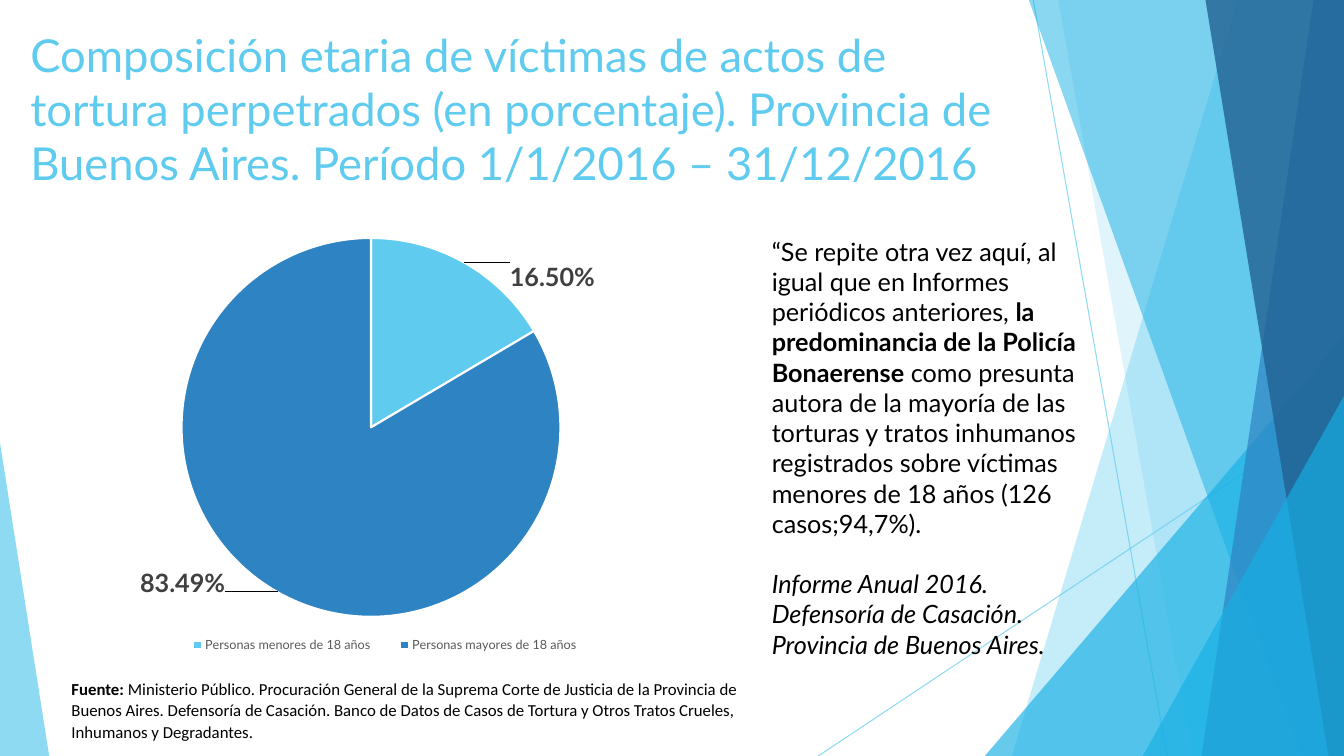
from dataclasses import dataclass

from lxml import etree
from pptx import Presentation
from pptx.chart.data import CategoryChartData
from pptx.dml.color import RGBColor
from pptx.enum.chart import XL_CHART_TYPE, XL_LABEL_POSITION, XL_LEGEND_POSITION
from pptx.enum.shapes import MSO_CONNECTOR, MSO_SHAPE
from pptx.enum.text import MSO_ANCHOR, MSO_AUTO_SIZE, PP_ALIGN
from pptx.oxml.ns import qn
from pptx.util import Cm, Pt

PIE = XL_CHART_TYPE.PIE
OUTSIDE_END = XL_LABEL_POSITION.OUTSIDE_END
LEGEND_BOTTOM = XL_LEGEND_POSITION.BOTTOM
STRAIGHT = MSO_CONNECTOR.STRAIGHT
TRIANGLE = MSO_SHAPE.ISOSCELES_TRIANGLE
MIDDLE = MSO_ANCHOR.MIDDLE
NO_AUTOFIT = MSO_AUTO_SIZE.NONE
LEFT = PP_ALIGN.LEFT

WIDTH, HEIGHT = 33.87, 19.05
COLORS = {
    "sky": "5FCBEF", "cyan": "17B0E4", "blue": "2E83C3", "navy": "226292",
    "black": "000000", "white": "FFFFFF", "label": "404040", "legend": "595959",
}


@dataclass(frozen=True)
class Ray:
    x1: float
    y1: float
    x2: float
    y2: float


@dataclass(frozen=True)
class Panel:
    top_left: float
    bottom_left: float
    color: str
    opacity: int


@dataclass(frozen=True)
class Corner:
    left: float
    top: float
    width: float
    apex: float
    color: str
    opacity: int


@dataclass(frozen=True)
class AgeGroup:
    name: str
    share: float
    color: str
    label_dx: float
    label_dy: float


RAYS = [Ray(26.04, 0, 29.41, HEIGHT), Ray(WIDTH, 10.24, 20.62, HEIGHT)]
FACETS = [
    Panel(31.19, 25.5, "sky", 36),
    Panel(26.67, 30.05, "sky", 20),
    Corner(24.82, 8.46, 9.05, 1, "cyan", 66),
    Panel(25.93, 32.79, "cyan", 50),
    Panel(33.1, 30.28, "blue", 70),
    Panel(30.38, 33.48, "navy", 80),
    Corner(28.8, 9.98, 5.07, 1, "cyan", 66),
    Corner(0, 11.15, 1.24, 0, "sky", 70),
]
AGE_GROUPS = [
    AgeGroup("Personas menores de 18 años", 0.165, "sky", 0.06, 0.07),
    AgeGroup("Personas mayores de 18 años", 0.8349, "blue", -0.07, -0.06),
]


def rgb(name: str) -> RGBColor:
    return RGBColor.from_string(COLORS[name])


def set_opacity(shape, percent: int) -> None:
    color = next(shape._element.spPr.iter(qn("a:srgbClr")))
    etree.SubElement(color, qn("a:alpha")).set("val", str(percent * 1000))


def draw_ray(slide, ray: Ray) -> None:
    line = slide.shapes.add_connector(STRAIGHT, Cm(ray.x1), Cm(ray.y1), Cm(ray.x2), Cm(ray.y2))
    line.line.color.rgb = rgb("sky")
    line.line.width = Pt(0.75)
    set_opacity(line, 70)
    etree.SubElement(line._element.spPr, qn("a:effectLst"))


def draw_facet(slide, facet: Panel | Corner) -> None:
    if isinstance(facet, Panel):
        outline = slide.shapes.build_freeform(Cm(facet.top_left), 0)
        outline.add_line_segments([
            (Cm(WIDTH), 0), (Cm(WIDTH), Cm(HEIGHT)), (Cm(facet.bottom_left), Cm(HEIGHT)),
        ])
        shape = outline.convert_to_shape()
    else:
        shape = slide.shapes.add_shape(
            TRIANGLE, Cm(facet.left), Cm(facet.top), Cm(facet.width), Cm(HEIGHT - facet.top))
        shape.adjustments[0] = facet.apex
    shape.shadow.inherit = False
    shape.fill.solid()
    shape.fill.fore_color.rgb = rgb(facet.color)
    shape.line.fill.background()
    set_opacity(shape, facet.opacity)


def style_font(font, name: str, size: float, color: str) -> None:
    font.name = name
    font.size = Pt(size)
    font.color.rgb = rgb(color)


def add_title(slide, text: str) -> None:
    title = slide.shapes.title
    title.left, title.top, title.width, title.height = Cm(0.51), Cm(0.43), Cm(25.73), Cm(4.6)
    frame = title.text_frame
    frame.text = text
    frame.auto_size = NO_AUTOFIT
    frame.vertical_anchor = MIDDLE
    frame.paragraphs[0].alignment = LEFT
    style_font(frame.paragraphs[0].font, "Lato", 32.4, "sky")


def add_text_frame(slide, left: float, top: float, width: float, height: float):
    box = slide.shapes.add_textbox(Cm(left), Cm(top), Cm(width), Cm(height))
    box.text_frame.word_wrap = True
    return box.text_frame


def add_runs(paragraph, runs: list[tuple[str, bool]]) -> None:
    for text, bold in runs:
        run = paragraph.add_run()
        run.text = text
        run.font.bold = bold


def manual_layout(**values: float | str):
    layout = etree.Element(qn("c:layout"))
    manual = etree.SubElement(layout, qn("c:manualLayout"))
    for tag, value in values.items():
        etree.SubElement(manual, qn(f"c:{tag}")).set("val", str(value))
    return layout


def add_age_chart(slide) -> None:
    data = CategoryChartData(number_format="0.00%")
    data.categories = [group.name for group in AGE_GROUPS]
    data.add_series("Series 1", [group.share for group in AGE_GROUPS])
    chart = slide.shapes.add_chart(PIE, Cm(0.51), Cm(4.98), Cm(17.68), Cm(12.32), data).chart
    chart.has_title = False
    style_font(chart.font, "Lato", 10, "black")
    chart.has_legend = True
    chart.legend.position = LEGEND_BOTTOM
    chart.legend.include_in_layout = False
    style_font(chart.legend.font, "Lato", 9, "legend")

    plot = chart.plots[0]
    plot.vary_by_categories = True
    shares = plot.series[0]
    shares.data_labels.show_value = True
    for index, group in enumerate(AGE_GROUPS):
        point = shares.points[index]
        point.format.fill.solid()
        point.format.fill.fore_color.rgb = rgb(group.color)
        point.format.line.color.rgb = rgb("white")
        point.format.line.width = Pt(1.5)
        style_font(point.data_label.font, "Lato", 18, "label")
        point.data_label.font.bold = True
        point.data_label.position = OUTSIDE_END

    space = chart._chartSpace
    for label, group in zip(space.iter(qn("c:dLbl")), AGE_GROUPS):
        number_format = etree.Element(qn("c:numFmt"), formatCode="0.00%", sourceLinked="0")
        label.find(qn("c:idx")).addnext(number_format)
        number_format.addprevious(manual_layout(x=group.label_dx, y=group.label_dy))
    plot_area = next(space.iter(qn("c:plotArea")))
    for old_layout in plot_area.findall(qn("c:layout")):
        plot_area.remove(old_layout)
    plot_area.insert(0, manual_layout(
        layoutTarget="inner", xMode="edge", yMode="edge", x=0.23, y=0.08, w=0.54, h=0.78))
    legend = next(space.iter(qn("c:legend")))
    for old_layout in legend.findall(qn("c:layout")):
        legend.remove(old_layout)
    legend.find(qn("c:legendPos")).addnext(manual_layout(
        xMode="edge", yMode="edge", x=0.21, y=0.88, w=0.62, h=0.07))


def add_quote(slide) -> None:
    frame = add_text_frame(slide, 19.2, 5.82, 8.46, 11.79)
    quote = frame.paragraphs[0]
    add_runs(quote, [
        ("“Se repite otra vez aquí, al igual que en Informes periódicos anteriores, ", False),
        ("la predominancia de la Policía Bonaerense", True),
        (" como presunta autora de la mayoría de las torturas y tratos inhumanos registrados "
         "sobre víctimas menores de 18 años (126 casos;94,7%).", False),
    ])
    report = frame.add_paragraph()
    report.text = "Informe Anual 2016. Defensoría de Casación. Provincia de Buenos Aires."
    report.space_before = Pt(21.6)
    report.font.italic = True
    for paragraph in (quote, report):
        style_font(paragraph.font, "Lato", 18, "black")


def add_source_note(slide) -> None:
    note = add_text_frame(slide, 1.55, 16.94, 18.29, 1.88).paragraphs[0]
    note.line_spacing = 1.07
    note.space_after = Pt(8)
    style_font(note.font, "Calibri", 12, "black")
    add_runs(note, [
        ("Fuente:", True),
        (" Ministerio Público. Procuración General de la Suprema Corte de Justicia de la "
         "Provincia de Buenos Aires. Defensoría de Casación. Banco de Datos de Casos de "
         "Tortura y Otros Tratos Crueles, Inhumanos y Degradantes.", False),
    ])


def main() -> None:
    deck = Presentation()
    deck.slide_width, deck.slide_height = Cm(WIDTH), Cm(HEIGHT)
    slide = deck.slides.add_slide(deck.slide_layouts[5])
    for ray in RAYS:
        draw_ray(slide, ray)
    for facet in FACETS:
        draw_facet(slide, facet)
    add_title(slide, "Composición etaria de víctimas de actos de tortura perpetrados "
                     "(en porcentaje). Provincia de Buenos Aires. Período 1/1/2016 – 31/12/2016")
    add_quote(slide)
    add_age_chart(slide)
    add_source_note(slide)
    deck.save("out.pptx")


if __name__ == "__main__":
    main()
